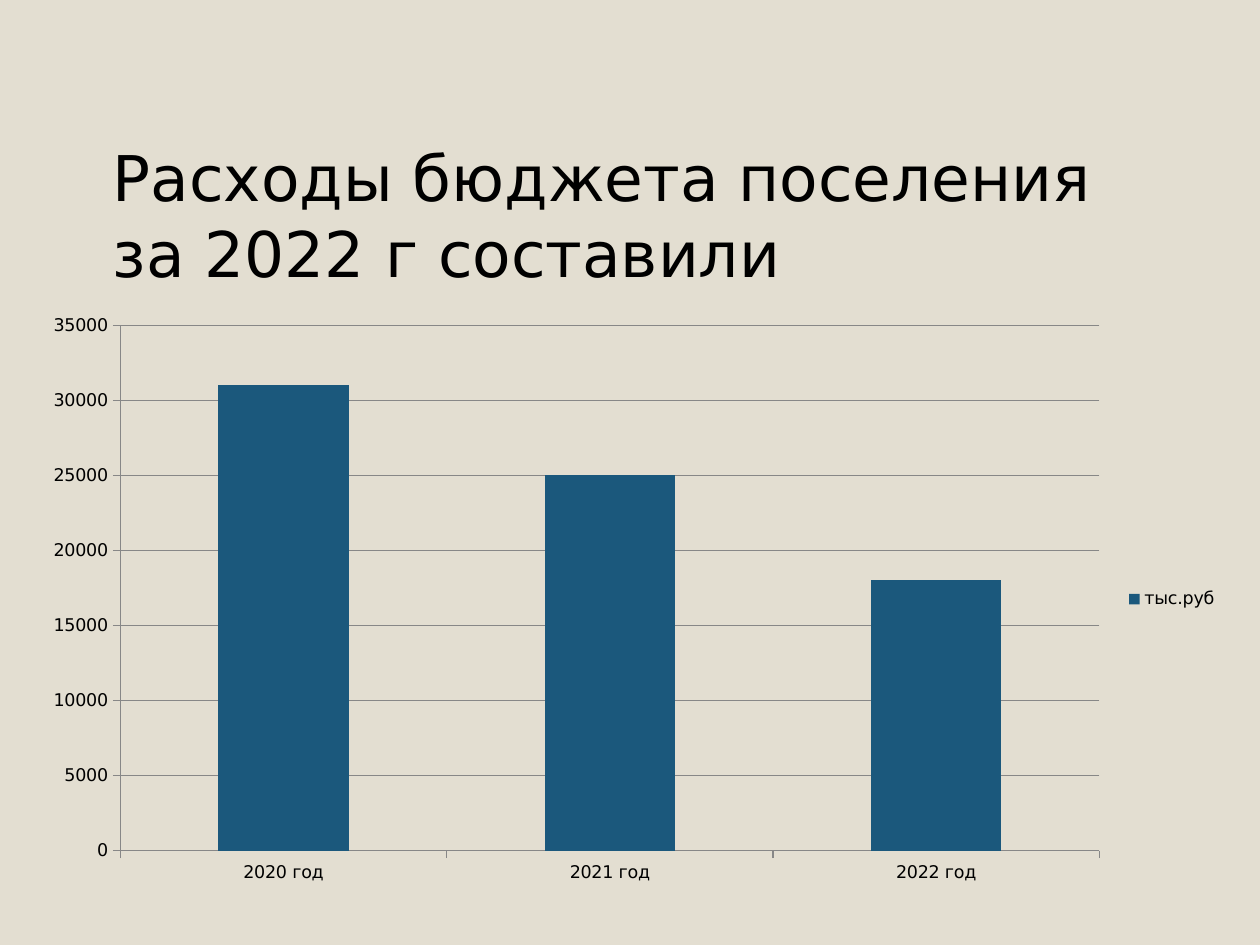
import dataclasses

import pptx
import pptx.chart.data
import pptx.dml.color
import pptx.enum.chart
import pptx.enum.text
import pptx.util

Pt = pptx.util.Pt
FONT = "DejaVu Sans"
HUES = {"back": "E3DED1", "text": "000000", "bar": "1B587C", "line": "878787"}


@dataclasses.dataclass
class Box:
    """A rectangle on the slide, in points."""
    left: float
    top: float
    width: float
    height: float

    def place(self) -> tuple:
        """Give the four lengths in the order that shapes take them."""
        return tuple(Pt(n) for n in dataclasses.astuple(self))


def hue(name: str) -> pptx.dml.color.RGBColor:
    """Look up a colour."""
    return pptx.dml.color.RGBColor.from_string(HUES[name])


def paint(fill, name: str) -> None:
    """Make a fill solid."""
    fill.solid()
    fill.fore_color.rgb = hue(name)


def style(font, size: float) -> None:
    """Set the face, size and colour of a font."""
    font.name = FONT
    font.size = Pt(size)
    font.color.rgb = hue("text")


def rule(line) -> None:
    """Draw a thin grey line."""
    line.width = Pt(0.75)
    line.color.rgb = hue("line")


def add_title(slide, box: Box, text: str) -> None:
    """Add the heading."""
    frame = slide.shapes.add_textbox(*box.place()).text_frame
    frame.word_wrap = True
    frame.vertical_anchor = pptx.enum.text.MSO_ANCHOR.MIDDLE
    frame.margin_left = frame.margin_right = Pt(7.2)
    frame.margin_top, frame.margin_bottom = Pt(3.6), Pt(0)
    frame.text = text
    style(frame.paragraphs[0].runs[0].font, 36)


def add_costs(slide, box: Box, name: str, costs: dict[str, int]) -> None:
    """Add the column chart of yearly spending."""
    enum = pptx.enum.chart
    data = pptx.chart.data.CategoryChartData()
    data.categories = list(costs)
    data.add_series(name, list(costs.values()))
    chart = slide.shapes.add_chart(
        enum.XL_CHART_TYPE.COLUMN_STACKED, *box.place(), data
    ).chart
    style(chart.font, 10)
    chart.has_title = False
    chart.has_legend = True
    chart.legend.position = enum.XL_LEGEND_POSITION.RIGHT
    chart.legend.include_in_layout = False

    plot = chart.plots[0]
    plot.gap_width, plot.overlap = 150, 100
    plot.vary_by_categories = False
    paint(plot.series[0].format.fill, "bar")

    for axis in (chart.category_axis, chart.value_axis):
        axis.major_tick_mark = enum.XL_TICK_MARK.OUTSIDE
        axis.minor_tick_mark = enum.XL_TICK_MARK.NONE
        rule(axis.format.line)
    scale = chart.value_axis
    scale.minimum_scale, scale.maximum_scale = 0, 35000
    scale.major_unit = 5000
    scale.has_major_gridlines = True
    rule(scale.major_gridlines.format.line)


def main() -> None:
    """Build and save the slide."""
    deck = pptx.Presentation()
    deck.slide_width, deck.slide_height = Pt(720), Pt(540)
    slide = deck.slides.add_slide(deck.slide_layouts[6])
    paint(slide.background.fill, "back")
    add_title(slide, Box(57.4, 78.8, 612, 83.5),
              "Расходы бюджета поселения за 2022 г составили")
    add_costs(slide, Box(16.9, 173.5, 686.2, 337.7), "тыс.руб",
              {"2020 год": 31000, "2021 год": 25000, "2022 год": 18000})
    deck.save("out.pptx")


if __name__ == "__main__":
    main()
